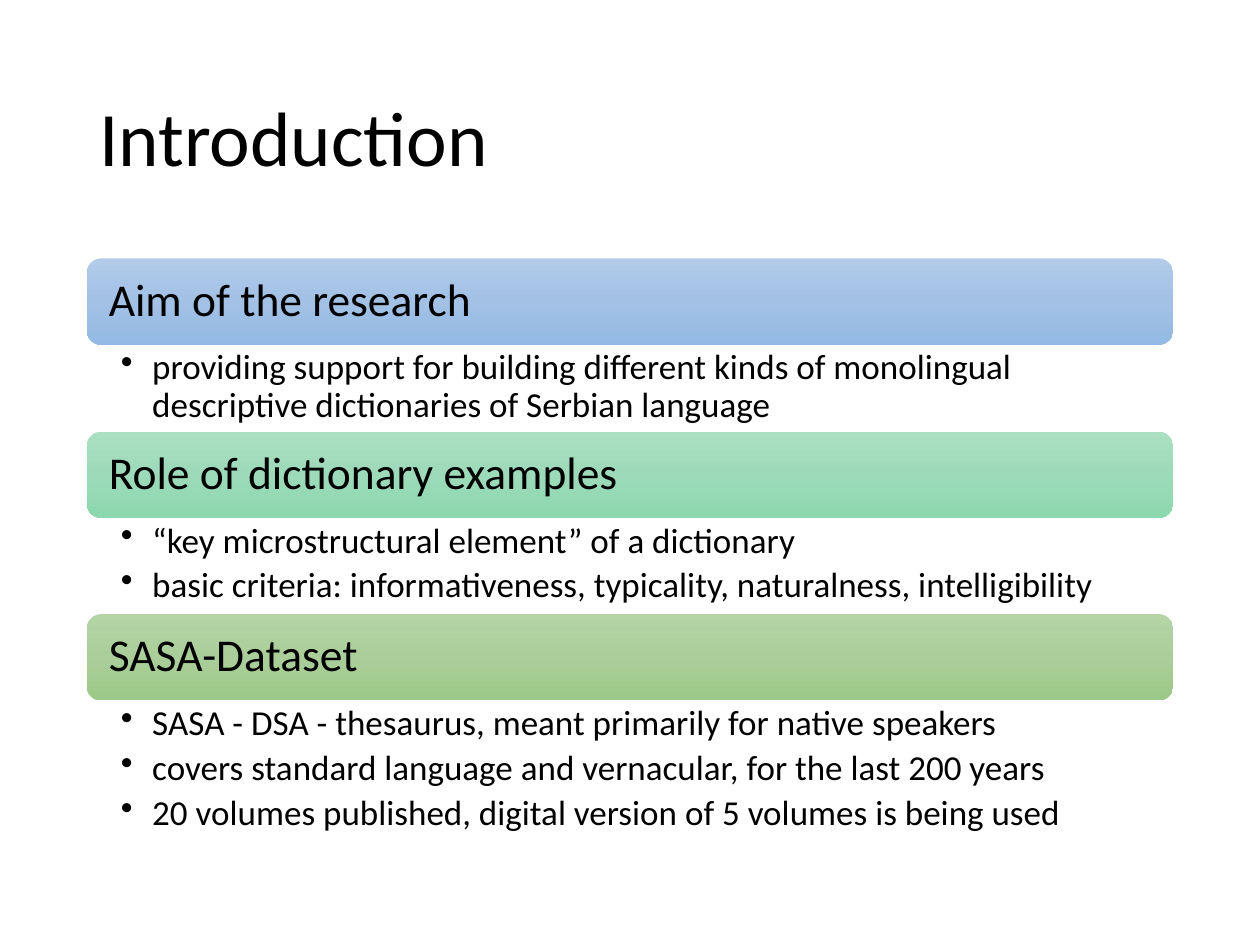
from copy import deepcopy

from lxml.etree import SubElement
from pptx import Presentation
from pptx.dml.color import RGBColor
from pptx.enum.shapes import MSO_SHAPE
from pptx.enum.text import MSO_ANCHOR, PP_ALIGN
from pptx.oxml.ns import qn
from pptx.util import Cm, Pt

BLACK = RGBColor(0x00, 0x00, 0x00)
BLUES = [RGBColor(0xB1, 0xCB, 0xE9), RGBColor(0xA3, 0xC1, 0xE5), RGBColor(0x93, 0xB9, 0xE4)]
MINTS = [RGBColor(0xAB, 0xE0, 0xC3), RGBColor(0x9D, 0xDA, 0xB9), RGBColor(0x8C, 0xD8, 0xAF)]
GREENS = [RGBColor(0xB5, 0xD5, 0xA7), RGBColor(0xAA, 0xCE, 0x9A), RGBColor(0x9C, 0xC9, 0x87)]

LEFT, WIDTH, BAR = Cm(1.75), Cm(21.9), Cm(1.74)

# heading, gradient, height of the list, list items
SECTIONS = [
    ("Aim of the research", BLUES, Cm(1.75), [
        "providing support for building different kinds of monolingual "
        "descriptive dictionaries of Serbian language"]),
    ("Role of dictionary examples", MINTS, Cm(1.94), [
        "“key microstructural element” of a dictionary",
        "basic criteria: informativeness, typicality, naturalness, intelligibility"]),
    ("SASA-Dataset", GREENS, Cm(2.92), [
        "SASA - DSA - thesaurus, meant primarily for native speakers",
        "covers standard language and vernacular, for the last 200 years",
        "20 volumes published, digital version of 5 volumes is being used"]),
]


def assign(target, values):
    for name, value in values.items():
        setattr(target, name, value)


def add_bullet(para):
    props = para._p.get_or_add_pPr()
    props.set("marL", str(Cm(0.63)))
    props.set("indent", str(-Cm(0.63)))
    SubElement(props, qn("a:buChar"), char="•")


def write(shape, lines, size, frame, bullet=False):
    text = shape.text_frame
    assign(text, {"word_wrap": True, **frame})
    for i, line in enumerate(lines):
        para = text.add_paragraph() if i else text.paragraphs[0]
        para.text = line
        assign(para, {"alignment": PP_ALIGN.LEFT, "line_spacing": 0.9})
        if bullet:
            assign(para, {"level": 1, "space_after": Pt(4)})
            add_bullet(para)
        font = para.runs[0].font
        assign(font, {"name": "Calibri", "size": Pt(size)})
        font.color.rgb = BLACK


def shade(shape, colors):
    """Fill the shape from top to bottom with evenly spaced colors."""
    fill = shape.fill
    fill.gradient()
    fill.gradient_angle = 270
    stops = shape._element.spPr.find(qn("a:gradFill")).find(qn("a:gsLst"))
    stops.insert(1, deepcopy(stops[0]))
    for i, (stop, color) in enumerate(zip(fill.gradient_stops, colors)):
        stop.position = i / (len(colors) - 1)
        stop.color.rgb = color


def add_title(slide, left, top, width, height):
    box = slide.shapes.add_textbox(left, top, width, height)
    write(box, ["Introduction"], 44, {"vertical_anchor": MSO_ANCHOR.MIDDLE})


def add_section(slide, left, top, width, height, heading, colors, items):
    bar = slide.shapes.add_shape(MSO_SHAPE.ROUNDED_RECTANGLE, left, top, width, BAR)
    bar.shadow.inherit = False
    bar.line.fill.background()
    shade(bar, colors)
    write(bar, [heading], 26, {
        "vertical_anchor": MSO_ANCHOR.MIDDLE,
        "margin_left": Cm(0.36), "margin_right": Cm(0.36)})

    body = slide.shapes.add_textbox(left, top + BAR, width, height - BAR)
    write(body, items, 20, {
        "vertical_anchor": MSO_ANCHOR.TOP,
        "margin_left": Cm(0.69), "margin_right": Cm(0.5),
        "margin_top": Cm(0.1), "margin_bottom": Cm(0.1)}, bullet=True)


def main():
    deck = Presentation()
    assign(deck, {"slide_width": Cm(25.4), "slide_height": Cm(19.05)})
    slide = deck.slides.add_slide(deck.slide_layouts[6])
    add_title(slide, LEFT, Cm(1.01), WIDTH, Cm(3.68))
    top = Cm(5.21)
    for heading, colors, depth, items in SECTIONS:
        height = BAR + depth
        add_section(slide, LEFT, top, WIDTH, height, heading, colors, items)
        top += height
    deck.save("out.pptx")


if __name__ == "__main__":
    main()
